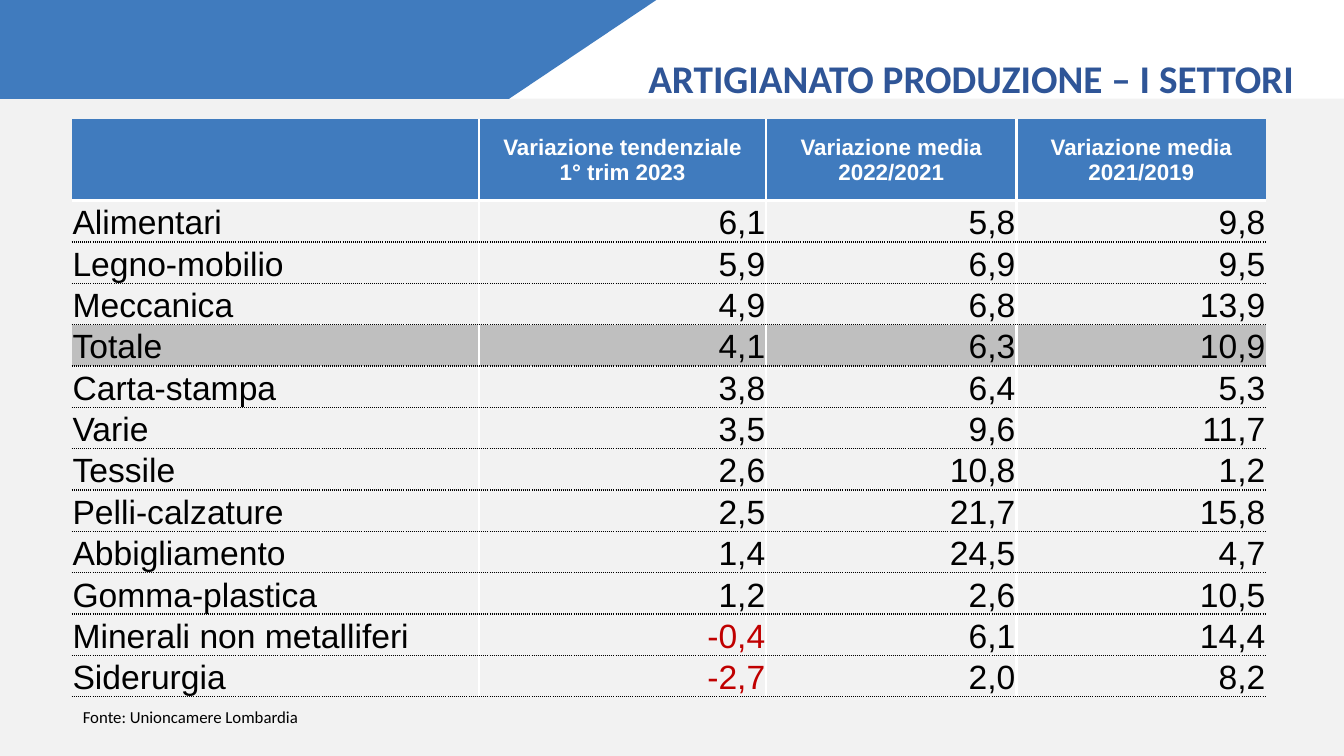
from lxml import etree
from pptx import Presentation
from pptx.dml.color import RGBColor
from pptx.enum.shapes import MSO_SHAPE
from pptx.enum.text import MSO_ANCHOR as Anchor, PP_ALIGN as Align
from pptx.oxml.ns import qn
from pptx.util import Inches, Pt

# Content
TITLE = "ARTIGIANATO PRODUZIONE – I SETTORI"
SOURCE = "Fonte: Unioncamere Lombardia"
HEADERS = ["", "Variazione tendenziale\n1° trim 2023",
           "Variazione media 2022/2021", "Variazione media 2021/2019"]
SECTORS = [
    ("Alimentari", "6,1", "5,8", "9,8"),
    ("Legno-mobilio", "5,9", "6,9", "9,5"),
    ("Meccanica", "4,9", "6,8", "13,9"),
    ("Totale", "4,1", "6,3", "10,9"),
    ("Carta-stampa", "3,8", "6,4", "5,3"),
    ("Varie", "3,5", "9,6", "11,7"),
    ("Tessile", "2,6", "10,8", "1,2"),
    ("Pelli-calzature", "2,5", "21,7", "15,8"),
    ("Abbigliamento", "1,4", "24,5", "4,7"),
    ("Gomma-plastica", "1,2", "2,6", "10,5"),
    ("Minerali non metalliferi", "-0,4", "6,1", "14,4"),
    ("Siderurgia", "-2,7", "2,0", "8,2"),
]
COLUMN_WIDTHS = [4.04, 2.85, 2.48, 2.48]
TABLE_LEFT, TABLE_TOP, TABLE_HEIGHT, HEADER_HEIGHT = 0.71, 1.18, 5.71, 0.81
BAND_HEIGHT = 0.98

WHITE = RGBColor(0xFF, 0xFF, 0xFF)
BLACK = RGBColor(0, 0, 0)
BLUE = RGBColor(0x40, 0x7B, 0xBE)
TITLE_BLUE = RGBColor(0x2F, 0x55, 0x97)
RED = RGBColor(0xC0, 0, 0)
GREY = RGBColor(0xBF, 0xBF, 0xBF)
PAGE = RGBColor(0xF2, 0xF2, 0xF2)

# Borders: colour, width in points, dash
SOLID_WHITE = (WHITE, 2, "solid")
DOTTED_BLACK = (BLACK, 1, "sysDot")


def set_font(paragraph, name, size, color, bold=False):
    font = paragraph.font
    font.name, font.size, font.bold = name, Pt(size), bold
    font.color.rgb = color


def paint(band, color):
    band.fill.solid()
    band.fill.fore_color.rgb = color
    band.line.fill.background()
    band.shadow.inherit = False


def add_label(text, left, top, width, height, size, color, bold=False):
    frame = slide.shapes.add_textbox(
        Inches(left), Inches(top), Inches(width), Inches(height)).text_frame
    frame.word_wrap = False
    frame.vertical_anchor = Anchor.MIDDLE
    frame.text = text
    frame.paragraphs[0].alignment = Align.CENTER
    set_font(frame.paragraphs[0], "Calibri", size, color, bold)


def set_borders(cell, **borders):
    properties = cell._tc.get_or_add_tcPr()
    for position, side in enumerate("LRTB"):
        line = etree.Element(qn(f"a:ln{side}"))
        border = borders.get(side)
        if border:
            color, width, dash = border
            line.set("w", str(Pt(width)))
            fill = etree.SubElement(line, qn("a:solidFill"))
            etree.SubElement(fill, qn("a:srgbClr")).set("val", str(color))
            etree.SubElement(line, qn("a:prstDash")).set("val", dash)
        else:
            etree.SubElement(line, qn("a:noFill"))
        properties.insert(position, line)


prs = Presentation()
prs.slide_width, prs.slide_height = Inches(13.33), Inches(7.5)
slide = prs.slides.add_slide(prs.slide_layouts[6])
slide.background.fill.solid()
slide.background.fill.fore_color.rgb = PAGE

# Title band
title_band = slide.shapes.add_shape(
    MSO_SHAPE.RECTANGLE, Inches(3.94), 0, Inches(9.4), Inches(BAND_HEIGHT))
paint(title_band, WHITE)
outline = slide.shapes.build_freeform(Inches(-0.02), 0)
outline.add_line_segments([(Inches(x), Inches(y)) for x, y in (
    (6.51, 0), (5.05, BAND_HEIGHT), (-0.02, BAND_HEIGHT))])
paint(outline.convert_to_shape(), BLUE)

# Source and title
add_label(SOURCE, 0.71, 6.96, 2.36, 0.3, 12, BLACK)
add_label(TITLE, 6.29, 0.49, 6.68, 0.57, 28, TITLE_BLUE, bold=True)

# Table of sectors
rows = [HEADERS, *SECTORS]
table = slide.shapes.add_table(
    len(rows), len(HEADERS), Inches(TABLE_LEFT), Inches(TABLE_TOP),
    Inches(sum(COLUMN_WIDTHS)), Inches(TABLE_HEIGHT)).table
table.first_row = table.horz_banding = False
for column, width in zip(table.columns, COLUMN_WIDTHS):
    column.width = Inches(width)
sector_height = (TABLE_HEIGHT - HEADER_HEIGHT) / len(SECTORS)

for r, values in enumerate(rows):
    is_header = r == 0
    table.rows[r].height = Inches(HEADER_HEIGHT if is_header else sector_height)
    for c, value in enumerate(values):
        cell = table.cell(r, c)
        cell.margin_left = cell.margin_right = cell.margin_top = Inches(0.01)
        cell.margin_bottom = 0
        cell.vertical_anchor = Anchor.MIDDLE if is_header else Anchor.BOTTOM
        cell.text = value
        for paragraph in cell.text_frame.paragraphs:
            if is_header:
                paragraph.alignment = Align.CENTER
                set_font(paragraph, "Arial", 16, WHITE, bold=True)
            else:
                paragraph.alignment = Align.RIGHT if c else Align.LEFT
                set_font(paragraph, "Arial", 24, RED if value.startswith("-") else BLACK)
        if is_header or values[0] == "Totale":
            cell.fill.solid()
            cell.fill.fore_color.rgb = BLUE if is_header else GREY
        else:
            cell.fill.background()
        set_borders(
            cell,
            L=SOLID_WHITE if c else None,
            R=SOLID_WHITE if c < len(HEADERS) - 1 else None,
            T=None if is_header else SOLID_WHITE if r == 1 else DOTTED_BLACK,
            B=SOLID_WHITE if is_header else DOTTED_BLACK)

prs.save("out.pptx")
